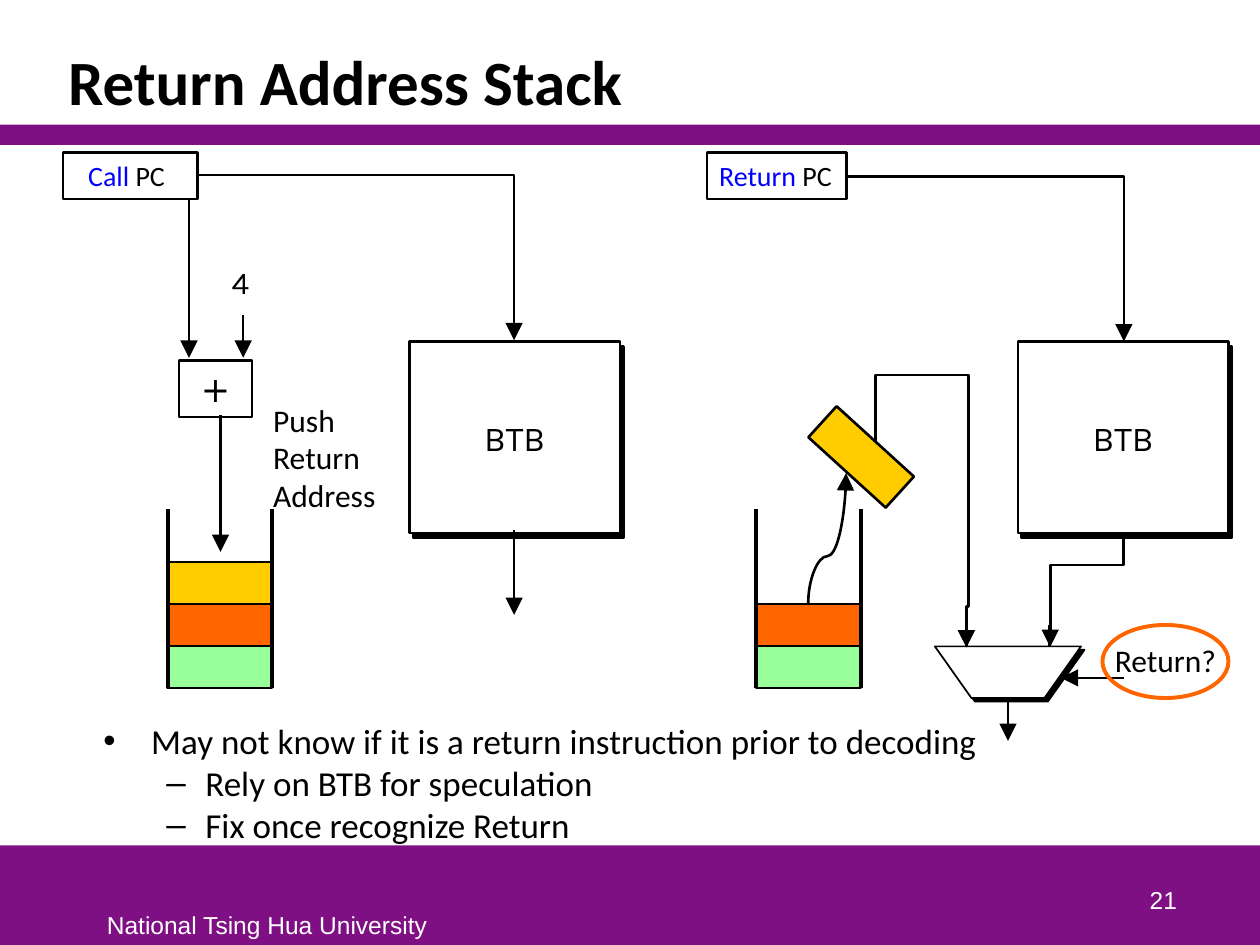
from lxml import etree
from pptx import Presentation
from pptx.dml.color import RGBColor
from pptx.enum.shapes import MSO_CONNECTOR, MSO_SHAPE
from pptx.enum.text import MSO_ANCHOR, MSO_AUTO_SIZE, PP_ALIGN
from pptx.oxml.ns import qn
from pptx.util import Inches, Pt

RECTANGLE, OVAL = MSO_SHAPE.RECTANGLE, MSO_SHAPE.OVAL
STRAIGHT = MSO_CONNECTOR.STRAIGHT
LEFT, CENTER, RIGHT = PP_ALIGN.LEFT, PP_ALIGN.CENTER, PP_ALIGN.RIGHT
TOP, MIDDLE, BOTTOM = MSO_ANCHOR.TOP, MSO_ANCHOR.MIDDLE, MSO_ANCHOR.BOTTOM

BLACK = RGBColor(0x00, 0x00, 0x00)
WHITE = RGBColor(0xFF, 0xFF, 0xFF)
PURPLE = RGBColor(0x7F, 0x10, 0x84)
BLUE = RGBColor(0x00, 0x00, 0xFF)
GREEN = RGBColor(0x99, 0xFF, 0x99)
ORANGE = RGBColor(0xFF, 0x66, 0x00)
YELLOW = RGBColor(0xFF, 0xCC, 0x00)

# Content; positions are left, top, width, height in inches
TITLE = "Return Address Stack"
BULLETS = [  # text, level, bullet, left margin, hanging indent
    ("May not know if it is a return instruction prior to decoding", 0, "•", 0.38, 0.38),
    ("Rely on BTB for speculation", 1, "–", 0.81, 0.31),
    ("Fix once recognize Return", 1, "–", 0.81, 0.31),
]
BANDS = [(0, 6.71, 10, 0.79), (0, 0.99, 10, 0.16)]
PC_BOXES = [  # position, coloured word, left inset
    ((0.5, 1.21, 1.07, 0.37), "Call ", 0.2),
    ((5.61, 1.21, 1.11, 0.37), "Return ", 0.1),
]
BTB_LEFTS = [3.25, 8.08]
STACKS = [  # left edge, cells from the bottom up
    (1.33, [GREEN, ORANGE, YELLOW]),
    (6.0, [GREEN, ORANGE]),
]
STACK_TOP, STACK_BOTTOM, CELL_WIDTH, CELL_HEIGHT = 4.04, 5.46, 0.83, 1 / 3
MUX = [(7.42, 5.13), (7.71, 5.54), (8.29, 5.54), (8.58, 5.13)]
ARROWS = [  # start x, start y, end x, end y
    (1.93, 2.5, 1.93, 2.84),
    (1.5, 1.59, 1.5, 2.84),
    (1.75, 3.29, 1.75, 4.38),
    (4.08, 4.21, 4.08, 4.88),
    (8, 5.54, 8, 5.88),
    (8.92, 5.38, 8.42, 5.38),
]
MUX_INPUTS = [(7.67, 4.96, 7.67, 5.13), (8.33, 4.96, 8.33, 5.13)]
ROUTES = [  # frame, preset, rotation, flipped, adjustments
    ((1.57, 1.39, 2.51, 1.31), "bentConnector2", 0, False, []),
    ((6.72, 1.4, 2.2, 1.31), "bentConnector2", 0, False, []),
    ((6.05, 4.12, 1.03, 0.3), "curvedConnector3", 270, False, [0.36]),
    ((6.49, 3.96, 1.64, 0.72), "bentConnector5", 90, True, [-0.32, 1.02, 0.8]),
    ((8.18, 4.4, 0.89, 0.58), "bentConnector3", 90, False, [0.27]),
]

deck = Presentation()
deck.slide_width, deck.slide_height = Inches(10), Inches(7.5)
page = deck.slides.add_slide(deck.slide_layouts[1])


def place(shape, position):
    shape.left, shape.top, shape.width, shape.height = map(Inches, position)


def write(box, lines, size=18, font="Calibri", color=BLACK, bold=False,
          align=LEFT, anchor=TOP, inset=0.1):
    """Fill a box; a line is a string or a list of (text, colour) pairs."""
    frame = box.text_frame
    frame.word_wrap = True
    frame.auto_size = MSO_AUTO_SIZE.NONE
    frame.vertical_anchor = anchor
    frame.margin_left = Inches(inset)
    frame.margin_right = Inches(0 if align == LEFT else inset)
    for index, line in enumerate(lines):
        para = frame.paragraphs[0] if index == 0 else frame.add_paragraph()
        para.alignment = align
        para.space_before = Pt(0)
        for text, tint in [(line, color)] if isinstance(line, str) else line:
            span = para.add_run()
            span.text = text
            span.font.size, span.font.name = Pt(size), font
            span.font.bold, span.font.color.rgb = bold, tint


def add_label(position, lines, **style):
    write(page.shapes.add_textbox(*map(Inches, position)), lines, **style)


def paint(shape, fill=None, line=BLACK, weight=1.5, shadow=None):
    """Set fill, outline and an optional hard shadow (points, degrees)."""
    if fill is None:
        shape.fill.background()
    else:
        shape.fill.solid()
        shape.fill.fore_color.rgb = fill
    if line is None:
        shape.line.fill.background()
    else:
        shape.line.color.rgb, shape.line.width = line, Pt(weight)
    shape.shadow.inherit = False
    if shadow:
        distance, angle = shadow
        effects = shape._element.spPr.find(qn("a:effectLst"))
        outer = etree.SubElement(effects, qn("a:outerShdw"), blurRad="0",
                                 dist=str(Pt(distance)), dir=str(angle * 60000),
                                 algn="ctr", rotWithShape="0")
        etree.SubElement(outer, qn("a:srgbClr"), val=str(BLACK))


def add_block(position, kind=RECTANGLE, **style):
    shape = page.shapes.add_shape(kind, *map(Inches, position))
    paint(shape, **style)
    return shape


def add_line(ends, weight=1.5, arrow=False):
    line = page.shapes.add_connector(STRAIGHT, *map(Inches, ends))
    line.line.color.rgb, line.line.width = BLACK, Pt(weight)
    properties = line._element.spPr
    if arrow:
        etree.SubElement(properties.find(qn("a:ln")), qn("a:tailEnd"),
                         type="triangle", w="lg", len="lg")
    etree.SubElement(properties, qn("a:effectLst"))
    return line


def add_route(frame, preset, rotation, flipped, adjustments):
    """Draw a bent or curved arrow inside its unrotated frame."""
    left, top, width, height = frame
    route = add_line((left, top, left + width, top + height), arrow=True)
    properties = route._element.spPr
    transform = properties.find(qn("a:xfrm"))
    transform.set("rot", str(rotation * 60000))
    if flipped:
        transform.set("flipV", "1")
    geometry = properties.find(qn("a:prstGeom"))
    geometry.set("prst", preset)
    guides = geometry.find(qn("a:avLst"))
    for number, value in enumerate(adjustments, 1):
        etree.SubElement(guides, qn("a:gd"), name=f"adj{number}",
                         fmla=f"val {round(value * 100000)}")


# Bands, title, footer and page number
for band in BANDS:
    add_block(band, fill=PURPLE, line=None)
title = page.shapes.title
place(title, (0.44, 0.25, 8.97, 0.74))
write(title, [TITLE], size=36, bold=True, anchor=BOTTOM)
title.text_frame.paragraphs[0].line_spacing = 0.85
add_label((0.75, 7.17, 2.76, 0.33), ["National Tsing Hua University"],
          size=14, font="Arial", color=WHITE)
add_label((7.36, 6.81, 2.08, 0.5), ["21"], size=14, font="Arial", color=WHITE,
          align=RIGHT, anchor=BOTTOM)

# Bullet list
body = page.placeholders[1]
place(body, (0.72, 5.66, 7.19, 1.06))
write(body, [bullet[0] for bullet in BULLETS], size=20)
for para, (_, level, mark, margin, hanging) in zip(body.text_frame.paragraphs, BULLETS):
    para.level = level
    settings = para._p.get_or_add_pPr()
    settings.set("marL", str(Inches(margin)))
    settings.set("indent", str(-Inches(hanging)))
    etree.SubElement(settings, qn("a:buFont"), typeface="Arial")
    etree.SubElement(settings, qn("a:buChar"), char=mark)

# Program counters, adder and branch target buffers
for position, word, inset in PC_BOXES:
    write(add_block(position), [[(word, BLUE), ("PC", BLACK)]], size=16, inset=inset)
adder = add_block((1.42, 2.86, 0.58, 0.45), fill=WHITE)
write(adder, ["+"], size=20, font="DejaVu Sans", align=CENTER, anchor=MIDDLE)
for left in BTB_LEFTS:
    buffer = add_block((left, 2.71, 1.67, 1.52), fill=WHITE, shadow=(3.6, 56))
    write(buffer, ["BTB"], size=20, font="Karla", align=CENTER, anchor=MIDDLE)

# Stacks and the popped entry
for left, cells in STACKS:
    for index, color in enumerate(cells, 1):
        add_block((left, STACK_BOTTOM - index * CELL_HEIGHT, CELL_WIDTH, CELL_HEIGHT),
                  fill=color)
    for wall in (left, left + CELL_WIDTH):
        add_line((wall, STACK_TOP, wall, STACK_BOTTOM), weight=2.25)
popped = add_block((6.42, 3.46, CELL_WIDTH, CELL_HEIGHT), fill=YELLOW)
popped.rotation = 42.3

# Multiplexer
corners = [(Inches(x), Inches(y)) for x, y in MUX]
builder = page.shapes.build_freeform(*corners[0])
builder.add_line_segments(corners[1:], close=True)
paint(builder.convert_to_shape(), fill=WHITE, weight=1, shadow=(2.8, 45))

# Lines, arrows and routed connectors
for ends in MUX_INPUTS:
    add_line(ends)
for ends in ARROWS:
    add_line(ends, arrow=True)
for route in ROUTES:
    add_route(*route)

# Labels
add_label((1.74, 2.04, 0.34, 0.4), ["4"], font="Karla")
add_label((2.07, 3.13, 1.02, 1.01), ["Push", "Return", "Address"])
add_label((8.75, 5.04, 1.02, 0.4), ["Return?"])
add_block((8.75, 4.96, 1, 0.58), kind=OVAL, line=ORANGE, weight=2.25)

deck.save("out.pptx")
